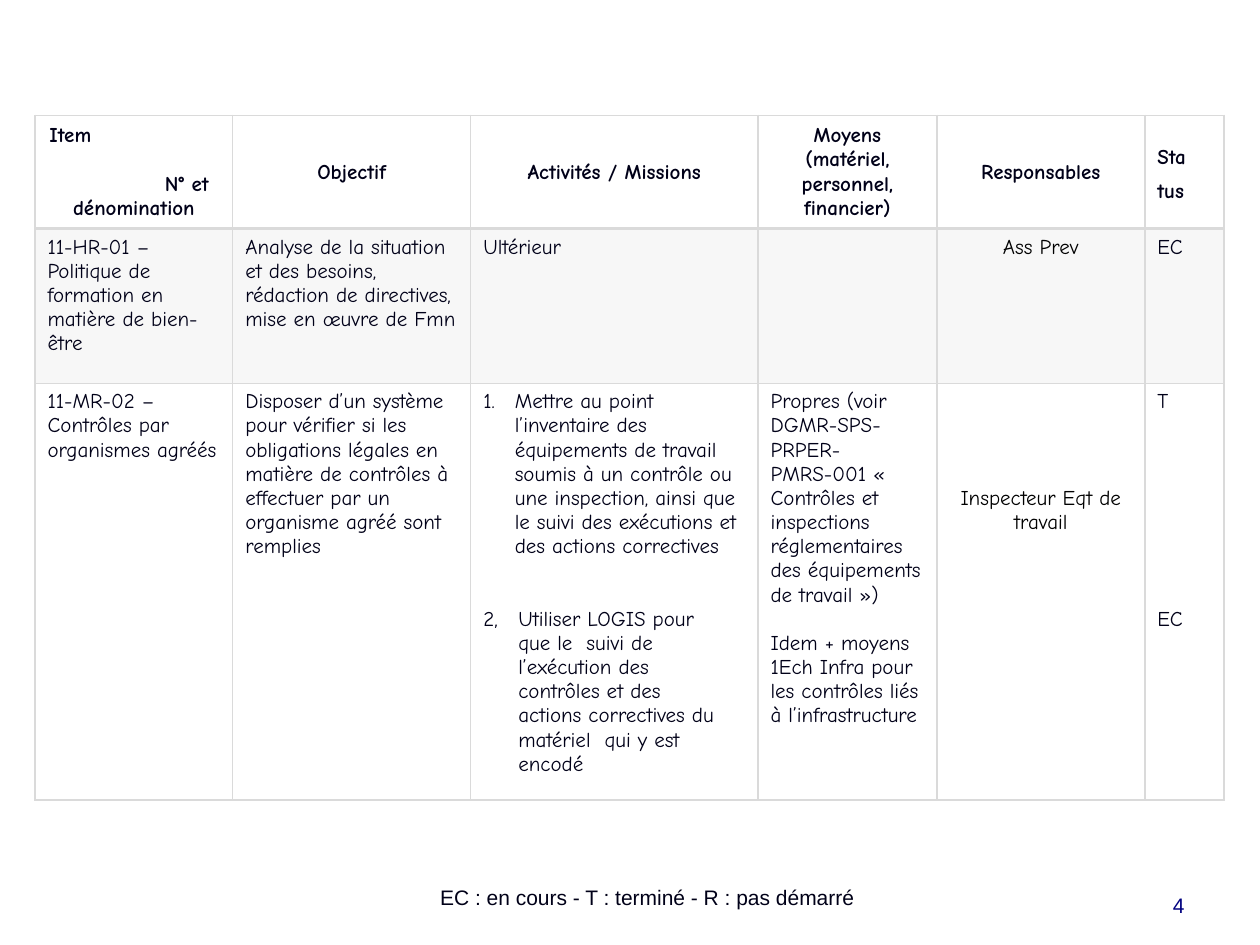
from lxml import etree
from pptx import Presentation
from pptx import util as u
from pptx.dml import color
from pptx.enum import text
from pptx.oxml import ns

COLORS = {"ink": "000018", "black": "000000", "number": "000080", "grid": "DADADA"}
LEFT, CENTER, RIGHT = text.PP_ALIGN.LEFT, text.PP_ALIGN.CENTER, text.PP_ALIGN.RIGHT
LINE = 13.8  # height of one line of table text


def para(words, **style):
    return {"words": words, **style}


def cell(*paras, **style):
    return {"paras": paras, **style}


def heading(*paras):
    return cell(*paras, anchor=text.MSO_ANCHOR.MIDDLE)


class ActionPlan:
    """Style and current slide."""

    def __init__(self, slide):
        self.slide = slide

    def rgb(self, name):
        return color.RGBColor.from_string(COLORS[name])

    def child(self, parent, tag, **attrs):
        return etree.SubElement(parent, ns.qn(tag), {k: str(v) for k, v in attrs.items()})

    def add_words(self, paragraph, words, align=LEFT, before=0, left=0, hang=0, number=False,
                  tab=None, ink="ink", bold=False, font="Comic Neue"):
        paragraph.alignment = align
        if before:
            paragraph.space_before = u.Pt(before)
        props = paragraph._p.get_or_add_pPr()
        props.set("marL", str(u.Pt(left)))
        props.set("indent", str(u.Pt(-hang)))
        if number:
            self.child(props, "a:buAutoNum", type="arabicPeriod")
        if tab:
            self.child(self.child(props, "a:tabLst"), "a:tab", pos=u.Pt(tab), algn="l")
        run = paragraph.add_run()
        run.text = words
        for name, value in {"size": u.Pt(12), "name": font, "bold": bold}.items():
            setattr(run.font, name, value)
        run.font.color.rgb = self.rgb(ink)

    def label(self, words, box, anchor, align, ink):
        frame = self.slide.shapes.add_textbox(*map(u.Pt, box)).text_frame
        frame.word_wrap = True
        frame.vertical_anchor = anchor
        self.add_words(frame.paragraphs[0], words, align, ink=ink, font="Arial")

    def borders(self, target, widths):
        props = target._tc.get_or_add_tcPr()
        for side, width in zip("LRTB", widths):
            line = self.child(props, f"a:ln{side}", w=u.Pt(width))
            fill = self.child(line, "a:solidFill")
            self.child(fill, "a:srgbClr", val=COLORS["grid"])

    def shade(self, target, shaded):
        if not shaded:
            target.fill.background()
            return
        target.fill.solid()
        target.fill.fore_color.rgb = self.rgb("grid")
        tint = target._tc.tcPr.find(ns.qn("a:solidFill")).find(ns.qn("a:srgbClr"))
        self.child(tint, "a:alpha", val=20000)

    def table(self, left, top, widths, heights, rows):
        grid = self.slide.shapes.add_table(
            len(rows), len(widths), *map(u.Pt, (left, top, sum(widths), sum(heights)))).table
        grid.first_row = grid.horz_banding = False
        for column, width in zip(grid.columns, widths):
            column.width = u.Pt(width)
        for r, (row, height) in enumerate(zip(rows, heights)):
            grid.rows[r].height = u.Pt(height)
            for c, content in enumerate(row):
                target = grid.cell(r, c)
                self.borders(target, (1, 1, 2 if r == 1 else 1, 2 if r == 0 else 1))
                self.shade(target, shaded=r == 1)
                target.vertical_anchor = content.get("anchor", text.MSO_ANCHOR.TOP)
                target.margin_top = u.Pt(3.6 + content.get("drop", 0))
                frame = target.text_frame
                for i, entry in enumerate(content["paras"]):
                    paragraph = frame.add_paragraph() if i else frame.paragraphs[0]
                    self.add_words(paragraph, **{"bold": r == 0, **entry})


# Header row
header = [
    heading(para("Item", left=1), para("N° et", left=67, before=LINE),
            para("dénomination", align=CENTER)),
    *(heading(para(words, align=CENTER)) for words in (
        "Objectif", "Activités / Missions",
        "Moyens (matériel, personnel, financier)", "Responsables")),
    cell(para("Sta"), para("tus", before=5.6), drop=LINE),
]

# Training policy
training = [
    cell(para("11-HR-01 – Politique de formation en matière de bien-être")),
    cell(para("Analyse de la situation et des besoins, rédaction de directives, "
              "mise en œuvre de Fmn")),
    cell(para("Ultérieur")),
    cell(),
    cell(para("Ass Prev", align=CENTER, ink="black")),
    cell(para("EC")),
]

# Inspections by approved bodies
tracking = ("que le  suivi de", "l’exécution des", "contrôles et des",
            "actions correctives du", "matériel  qui y est", "encodé")
inspections = [
    cell(para("11-MR-02 – Contrôles par organismes agréés")),
    cell(para("Disposer d’un système pour vérifier si les obligations légales en matière "
              "de contrôles à effectuer par un organisme agréé sont remplies")),
    cell(para("Mettre au point l’inventaire des équipements de travail soumis à un contrôle "
              "ou une inspection, ainsi que le suivi des exécutions et des actions "
              "correctives", left=18, hang=18, number=True),
         para("2,\tUtiliser LOGIS pour", left=20, hang=20, tab=16, before=2 * LINE),
         *(para(words, left=20) for words in tracking)),
    cell(para("Propres (voir DGMR-SPS-PRPER-PMRS-001 « Contrôles et inspections "
              "réglementaires des équipements de travail »)"),
         para("Idem + moyens 1Ech Infra pour les contrôles liés à l’infrastructure",
              before=LINE)),
    cell(para("Inspecteur Eqt de travail", align=CENTER, ink="black"), drop=4 * LINE),
    cell(para("T"), para("EC", before=8 * LINE)),
]


def main():
    deck = Presentation()
    deck.slide_width, deck.slide_height = u.Pt(720), u.Pt(540)
    plan = ActionPlan(deck.slides.add_slide(deck.slide_layouts[6]))

    # Page number
    plan.label("4", (516, 492, 168, 36), text.MSO_ANCHOR.BOTTOM, RIGHT, "number")
    # Action table
    plan.table(20, 66, (113, 136, 164.2, 102.2, 118.8, 45.4), (64.8, 88.4, 238),
               (header, training, inspections))
    # Status legend
    plan.label("EC : en cours - T : terminé - R : pas démarré", (190, 502, 360, 22),
               text.MSO_ANCHOR.TOP, CENTER, "ink")
    deck.save("out.pptx")


if __name__ == "__main__":
    main()
